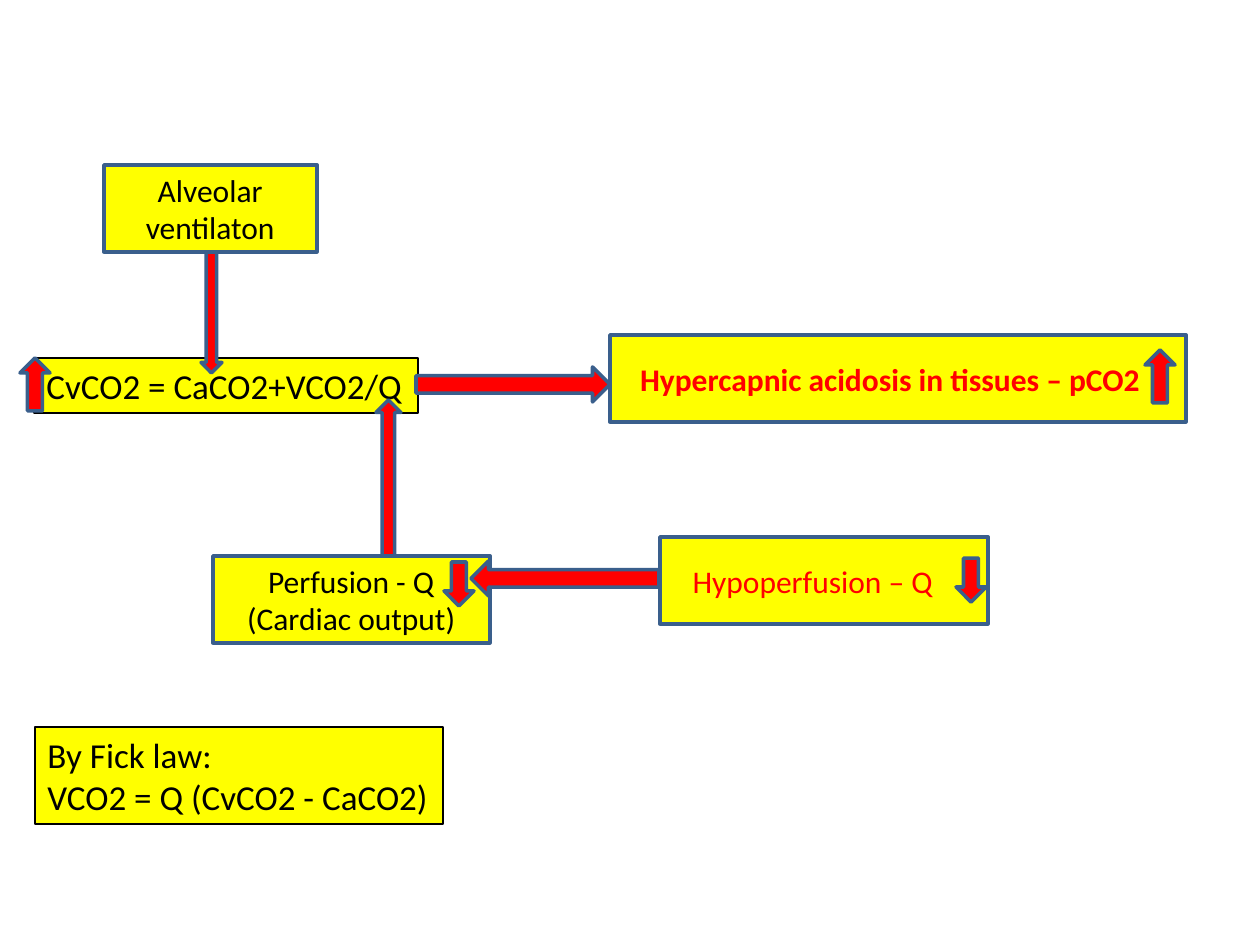
import pptx
import pptx.util
import pptx.dml.color
import pptx.enum.shapes
import pptx.enum.text

SCALE = 914400 / 126
COLORS = {"fill": "FFFF00", "arrow": "FF0000", "border": "3A5F8C", "ink": "000000"}
SHAPES = pptx.enum.shapes.MSO_SHAPE
ALIGN = pptx.enum.text.PP_ALIGN
ANCHOR = pptx.enum.text.MSO_ANCHOR
SMALL_ARROW = (30, 44)
TALL_ARROW = (30, 53)


def px(length):
    """Turn a length in px into EMU."""
    return pptx.util.Emu(round(length * SCALE))


def color(name):
    """Look up a named colour."""
    return pptx.dml.color.RGBColor.from_string(COLORS[name])


def add_shape(slide, kind, box, fill, line, line_width):
    """Add a filled and outlined preset shape without a shadow."""
    shape = slide.shapes.add_shape(kind, *map(px, box))
    shape.shadow.inherit = False
    shape.fill.solid()
    shape.fill.fore_color.rgb = color(fill)
    shape.line.color.rgb = color(line)
    shape.line.width = pptx.util.Pt(line_width)
    return shape


def add_arrow(slide, kind, left, top, size):
    """Add a red block arrow."""
    return add_shape(slide, kind, (left, top, *size), "arrow", "border", 2)


def write_lines(shape, lines, size, ink, align, bold=False):
    """Write one paragraph per line in a single style."""
    frame = shape.text_frame
    frame.text = "\n".join(lines)
    for paragraph in frame.paragraphs:
        paragraph.alignment = align
        paragraph.font.name = "Calibri"
        paragraph.font.size = pptx.util.Pt(size)
        paragraph.font.bold = bold
        paragraph.font.color.rgb = color(ink)


def add_factor(slide, box, lines, ink="ink", bold=False, right_inset=13):
    """Add a blue-edged box with centred text."""
    shape = add_shape(slide, SHAPES.RECTANGLE, box, "fill", "border", 2)
    write_lines(shape, lines, 18, ink, ALIGN.CENTER, bold)
    shape.text_frame.word_wrap = True
    shape.text_frame.vertical_anchor = ANCHOR.MIDDLE
    shape.text_frame.margin_right = px(right_inset)


def add_formula(slide, box, lines):
    """Add a black-edged box with left-aligned text."""
    shape = add_shape(slide, SHAPES.RECTANGLE, box, "fill", "ink", 1.5)
    write_lines(shape, lines, 20, "ink", ALIGN.LEFT)
    shape.text_frame.word_wrap = False
    shape.text_frame.vertical_anchor = ANCHOR.TOP


def draw_venous_content(slide, box):
    """Draw the venous content formula with its rising marker."""
    left, top, width, height = box
    add_formula(slide, box, ["CvCO2 = CaCO2+VCO2/Q"])
    add_arrow(slide, SHAPES.UP_ARROW, left - 14, top, TALL_ARROW)


def draw_ventilation(slide, box):
    """Draw the ventilation box with its arrow down to the formula."""
    left, top, width, height = box
    add_factor(slide, box, ["Alveolar ventilaton"])
    add_arrow(slide, SHAPES.DOWN_ARROW, left + 97, top + height, (21, 121))


def draw_perfusion(slide, box):
    """Draw the perfusion box with its arrow up and falling marker."""
    left, top, width, height = box
    add_factor(slide, box, ["Perfusion - Q", "(Cardiac output)"])
    add_arrow(slide, SHAPES.UP_ARROW, left + 163, top - 156, (25, 156))
    add_arrow(slide, SHAPES.DOWN_ARROW, left + 231, top + 6, SMALL_ARROW)


def draw_hypoperfusion(slide, box):
    """Draw the hypoperfusion box with its arrow left and falling marker."""
    left, top, width, height = box
    add_factor(slide, box, ["Hypoperfusion – Q"], "arrow", right_inset=35)
    add_arrow(slide, SHAPES.DOWN_ARROW, left + width - 32, top + 21, SMALL_ARROW)
    add_arrow(slide, SHAPES.LEFT_ARROW, left - 189, top + 24, (188, 35))


def draw_acidosis(slide, box):
    """Draw the acidosis box with its incoming arrow and rising marker."""
    left, top, width, height = box
    add_factor(slide, box, ["Hypercapnic acidosis in tissues – pCO2"], "arrow", True, 28)
    add_arrow(slide, SHAPES.UP_ARROW, left + width - 41, top + 15, TALL_ARROW)
    add_arrow(slide, SHAPES.RIGHT_ARROW, left - 194, top + 32, (194, 35))


def draw_fick_law(slide, box):
    """Draw the Fick law note."""
    add_formula(slide, box, ["By Fick law:", "VCO2 = Q (CvCO2 - CaCO2)"])


def main():
    """Build and save the presentation."""
    presentation = pptx.Presentation()
    presentation.slide_width, presentation.slide_height = px(1260), px(945)
    slide = presentation.slides.add_slide(presentation.slide_layouts[6])
    draw_venous_content(slide, (34, 358, 384, 55))
    draw_ventilation(slide, (104, 165, 213, 87))
    draw_perfusion(slide, (213, 556, 277, 87))
    draw_hypoperfusion(slide, (660, 537, 328, 87))
    draw_acidosis(slide, (610, 335, 576, 87))
    draw_fick_law(slide, (35, 727, 408, 97))
    presentation.save("out.pptx")


if __name__ == "__main__":
    main()
